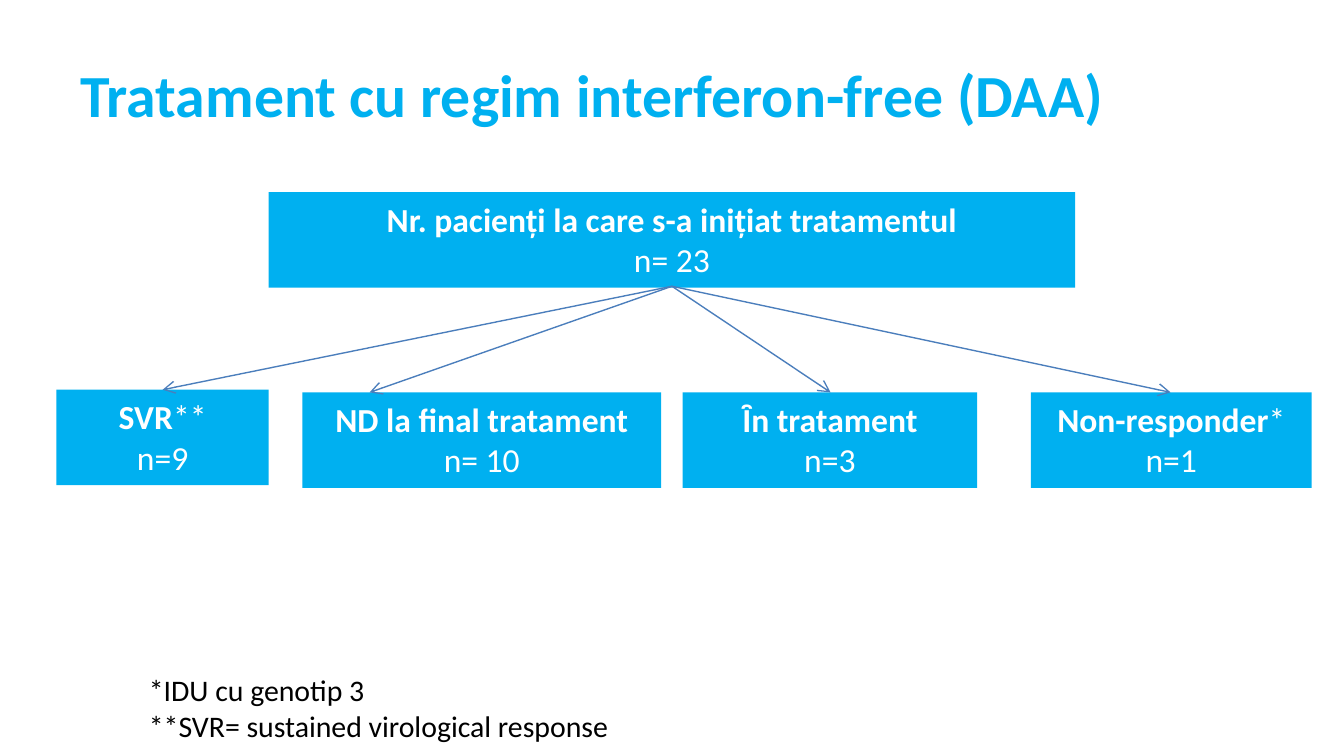
import pptx
import pptx.util
import pptx.dml.color
import pptx.enum.shapes
import pptx.enum.text
import pptx.oxml
import pptx.oxml.ns
from pptx.util import Inches

SKY = pptx.dml.color.RGBColor(0x00, 0xB0, 0xF0)
ARROW_BLUE = pptx.dml.color.RGBColor(0x4B, 0x7E, 0xBC)
WHITE = pptx.dml.color.RGBColor(0xFF, 0xFF, 0xFF)
BLACK = pptx.dml.color.RGBColor(0x00, 0x00, 0x00)
FONT = "Calibri"
LEFT = pptx.enum.text.PP_ALIGN.LEFT
CENTER = pptx.enum.text.PP_ALIGN.CENTER
GROW = pptx.enum.text.MSO_AUTO_SIZE.SHAPE_TO_FIT_TEXT

TITLE = "Tratament cu regim interferon-free (DAA)"
INITIATED = ("Nr. pacienți la care s-a inițiat tratamentul", "", "n= 23")
FOOTNOTES = ["*IDU cu genotip 3", "**SVR= sustained virological response"]
OUTCOMES = [
    {"label": "SVR", "mark": "**", "count": "n=9",
     "left": 0.42, "top": 2.9, "width": 1.58, "target": 1.21},
    {"label": "ND la final tratament", "mark": "", "count": "n= 10",
     "left": 2.25, "top": 2.92, "width": 2.67, "target": 2.75},
    {"label": "Ȋn tratament", "mark": "", "count": "n=3",
     "left": 5.08, "top": 2.92, "width": 2.19, "target": 6.18},
    {"label": "Non-responder", "mark": "*", "count": "n=1",
     "left": 7.67, "top": 2.92, "width": 2.09, "target": 8.71},
]
BOX_HEIGHT = 0.71
ROOT_LEFT, ROOT_TOP, ROOT_WIDTH = 2, 1.43, 6
ARROW_ORIGIN = (ROOT_LEFT + ROOT_WIDTH / 2, 2.13)


def write_lines(frame, lines, size, color, align):
    frame.word_wrap = True
    for index, pieces in enumerate(lines):
        paragraph = frame.paragraphs[0] if index == 0 else frame.add_paragraph()
        paragraph.alignment = align
        for words, bold in pieces:
            if words:
                run = paragraph.add_run()
                run.text = words
                run.font.name = FONT
                run.font.size = pptx.util.Pt(size)
                run.font.bold = bold
                run.font.color.rgb = color


def add_box(slide, left, top, width, label, mark, count):
    box = slide.shapes.add_shape(
        pptx.enum.shapes.MSO_SHAPE.RECTANGLE,
        Inches(left), Inches(top), Inches(width), Inches(BOX_HEIGHT))
    box.shadow.inherit = False
    box.fill.solid()
    box.fill.fore_color.rgb = SKY
    box.line.fill.background()
    box.text_frame.vertical_anchor = pptx.enum.text.MSO_ANCHOR.TOP
    box.text_frame.auto_size = GROW
    lines = [[(label, True), (mark, False)], [(count, False)]]
    write_lines(box.text_frame, lines, 18, WHITE, CENTER)


def add_arrow(slide, start, end):
    arrow = slide.shapes.add_connector(
        pptx.enum.shapes.MSO_CONNECTOR.STRAIGHT,
        *(Inches(value) for value in start + end))
    arrow.line.color.rgb = ARROW_BLUE
    arrow.line.width = pptx.util.Pt(0.75)
    properties = arrow._element.spPr
    namespace = pptx.oxml.ns.nsdecls("a")
    properties.find(pptx.oxml.ns.qn("a:ln")).append(
        pptx.oxml.parse_xml(f'<a:tailEnd {namespace} type="arrow"/>'))
    properties.append(pptx.oxml.parse_xml(f"<a:effectLst {namespace}/>"))


def main():
    deck = pptx.Presentation()
    deck.slide_width = Inches(10)
    deck.slide_height = deck.slide_width * 9 // 16
    slide = deck.slides.add_slide(deck.slide_layouts[6])

    title = slide.shapes.add_textbox(
        Inches(0.5), Inches(0.23), Inches(9), Inches(0.94))
    title.text_frame.vertical_anchor = pptx.enum.text.MSO_ANCHOR.MIDDLE
    write_lines(title.text_frame, [[(TITLE, True)]], 32, SKY, LEFT)

    add_box(slide, ROOT_LEFT, ROOT_TOP, ROOT_WIDTH, *INITIATED)
    for outcome in OUTCOMES:
        add_box(slide, outcome["left"], outcome["top"], outcome["width"],
                outcome["label"], outcome["mark"], outcome["count"])
        add_arrow(slide, ARROW_ORIGIN, (outcome["target"], outcome["top"]))

    footnotes = slide.shapes.add_textbox(
        Inches(1.01), Inches(4.95), Inches(8), Inches(0.64))
    footnotes.text_frame.auto_size = GROW
    write_lines(footnotes.text_frame, [[(note, False)] for note in FOOTNOTES],
                16, BLACK, LEFT)

    deck.save("out.pptx")


if __name__ == "__main__":
    main()
